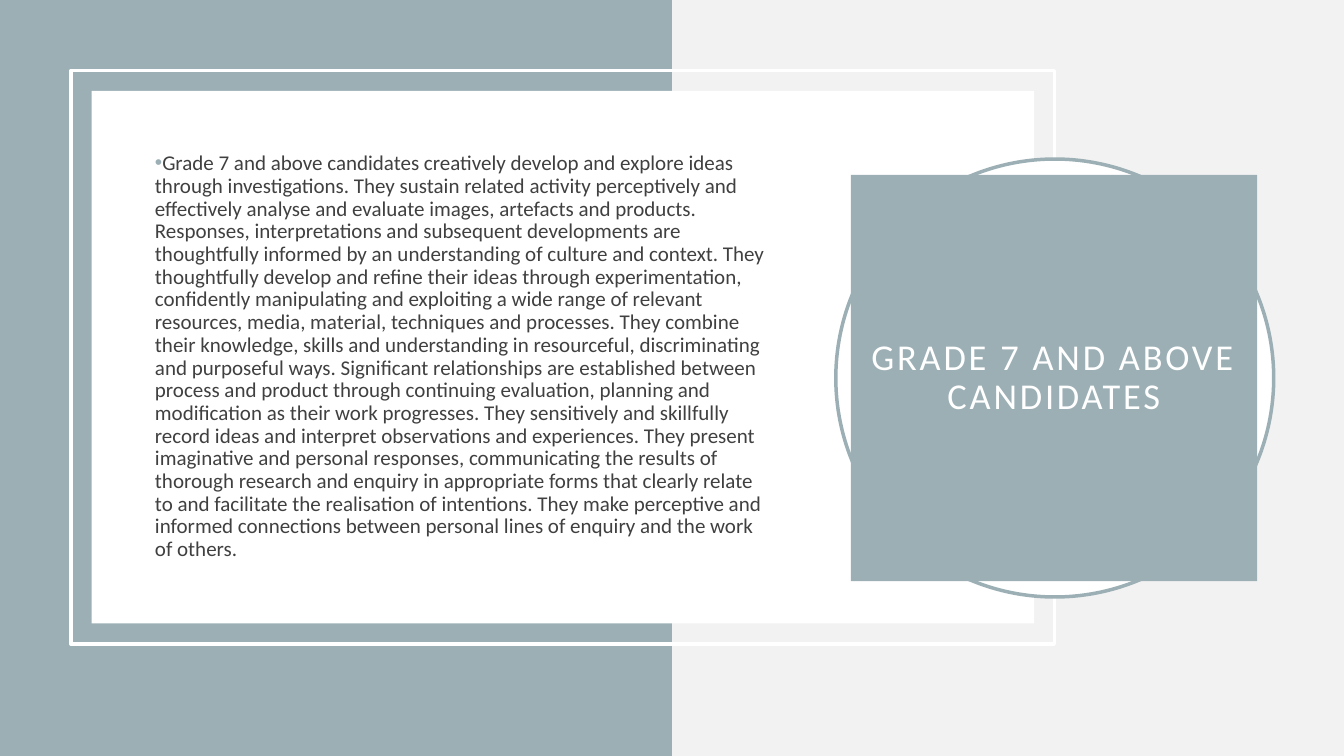
from dataclasses import dataclass
from typing import Optional

from lxml import etree
from pptx import Presentation
from pptx import util as u
from pptx.dml.color import RGBColor
from pptx.enum import shapes, text
from pptx.oxml import ns


@dataclass(frozen=True)
class Theme:
    slate: str = "9BAFB5"
    backdrop: str = "F2F2F2"
    white: str = "FFFFFF"
    ink: str = "404040"
    font: str = "Calibri"
    body_size: float = 15
    title_size: float = 26
    title_spacing: float = 2
    line_width: float = 2.5
    line_spacing: float = 0.9


@dataclass(frozen=True)
class Panel:
    left: float
    top: float
    width: float
    height: float
    fill: Optional[str] = None
    line: Optional[str] = None
    kind: shapes.MSO_SHAPE = shapes.MSO_SHAPE.RECTANGLE


THEME = Theme()
SLIDE_WIDTH, SLIDE_HEIGHT = 960, 540
TITLE = "GRADE 7 AND ABOVE CANDIDATES"
BODY_SENTENCES = (
    "Grade 7 and above candidates creatively develop and explore ideas through "
    "investigations.",
    "They sustain related activity perceptively and effectively analyse and evaluate "
    "images, artefacts and products.",
    "Responses, interpretations and subsequent developments are thoughtfully informed "
    "by an understanding of culture and context.",
    "They thoughtfully develop and refine their ideas through experimentation, "
    "confidently manipulating and exploiting a wide range of relevant resources, "
    "media, material, techniques and processes.",
    "They combine their knowledge, skills and understanding in resourceful, "
    "discriminating and purposeful ways.",
    "Significant relationships are established between process and product through "
    "continuing evaluation, planning and modification as their work progresses.",
    "They sensitively and skillfully record ideas and interpret observations and "
    "experiences.",
    "They present imaginative and personal responses, communicating the results of "
    "thorough research and enquiry in appropriate forms that clearly relate to and "
    "facilitate the realisation of intentions.",
    "They make perceptive and informed connections between personal lines of enquiry "
    "and the work of others.",
)

LEFT_HALF = Panel(0, 0, SLIDE_WIDTH / 2, SLIDE_HEIGHT, fill=THEME.slate)
FRAME = Panel(50.6, 50.4, 702.5, 409.7, line=THEME.white)
CARD = Panel(65.5, 64.9, 673.2, 380.4, fill=THEME.white)
RING = Panel(597, 113.6, 312.8, 312.8, fill=THEME.white, line=THEME.slate,
             kind=shapes.MSO_SHAPE.OVAL)
TITLE_BOX = Panel(607.8, 124.9, 290.2, 290.2, fill=THEME.slate)
BODY_BOX = Panel(103.6, 100.8, 450, 308.2)


def add_panel(slide, panel: Panel):
    shape = slide.shapes.add_shape(
        panel.kind, u.Pt(panel.left), u.Pt(panel.top),
        u.Pt(panel.width), u.Pt(panel.height))
    shape.shadow.inherit = False
    if panel.fill:
        shape.fill.solid()
        shape.fill.fore_color.rgb = RGBColor.from_string(panel.fill)
    else:
        shape.fill.background()
    if panel.line:
        shape.line.color.rgb = RGBColor.from_string(panel.line)
        shape.line.width = u.Pt(THEME.line_width)
    else:
        shape.line.fill.background()
    return shape


def write_text(shape, content: str, size: float, color: str, alignment):
    text_frame = shape.text_frame
    text_frame.text = content
    text_frame.word_wrap = True
    text_frame.vertical_anchor = text.MSO_ANCHOR.MIDDLE
    paragraph = text_frame.paragraphs[0]
    paragraph.alignment = alignment
    paragraph.line_spacing = THEME.line_spacing
    font = paragraph.runs[0].font
    font.name = THEME.font
    font.size = u.Pt(size)
    font.color.rgb = RGBColor.from_string(color)
    return paragraph


def add_bullet(paragraph, color: str, hanging: float) -> None:
    properties = paragraph._p.get_or_add_pPr()
    properties.set("marL", "0")
    properties.set("indent", str(-u.Pt(hanging)))
    bullet_color = etree.SubElement(properties, ns.qn("a:buClr"))
    etree.SubElement(bullet_color, ns.qn("a:srgbClr"), val=color)
    etree.SubElement(properties, ns.qn("a:buFont"), typeface="Arial")
    etree.SubElement(properties, ns.qn("a:buChar"), char="•")


def add_body(slide) -> None:
    box = slide.shapes.add_textbox(
        u.Pt(BODY_BOX.left), u.Pt(BODY_BOX.top),
        u.Pt(BODY_BOX.width), u.Pt(BODY_BOX.height))
    paragraph = write_text(box, " ".join(BODY_SENTENCES), THEME.body_size, THEME.ink,
                           text.PP_ALIGN.LEFT)
    paragraph.space_before = u.Pt(10)
    add_bullet(paragraph, THEME.slate, hanging=18)


def add_title(slide) -> None:
    shape = add_panel(slide, TITLE_BOX)
    paragraph = write_text(shape, TITLE, THEME.title_size, THEME.white,
                           text.PP_ALIGN.CENTER)
    run_properties = paragraph.runs[0]._r.get_or_add_rPr()
    run_properties.set("spc", str(round(THEME.title_spacing * 100)))
    text_frame = shape.text_frame
    text_frame.margin_left = text_frame.margin_right = u.Pt(14.4)
    text_frame.margin_top = text_frame.margin_bottom = u.Pt(14.4)


def main() -> None:
    presentation = Presentation()
    presentation.slide_width = u.Pt(SLIDE_WIDTH)
    presentation.slide_height = u.Pt(SLIDE_HEIGHT)
    slide = presentation.slides.add_slide(presentation.slide_layouts[6])
    slide.background.fill.solid()
    slide.background.fill.fore_color.rgb = RGBColor.from_string(THEME.backdrop)
    for panel in (LEFT_HALF, FRAME, CARD):
        add_panel(slide, panel)
    add_body(slide)
    add_panel(slide, RING)
    add_title(slide)
    presentation.save("out.pptx")


if __name__ == "__main__":
    main()
